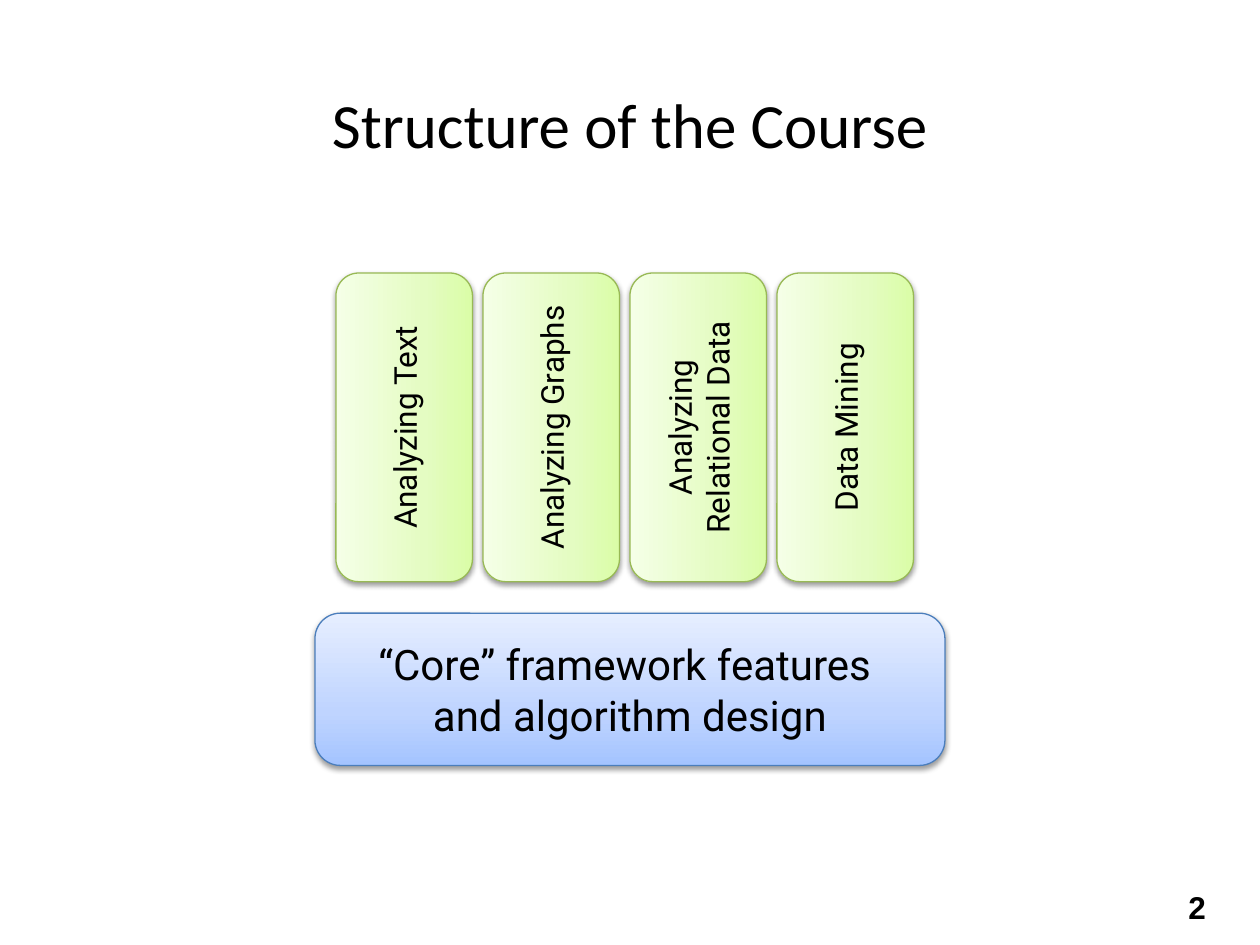
"""Build the course structure slide: four pillars standing on a core block."""
from copy import deepcopy
from dataclasses import dataclass

from lxml import etree
from pptx import Presentation, util as u
from pptx.dml.color import RGBColor
from pptx.enum import shapes, text
from pptx.oxml.ns import qn

COLS, ROWS = 60, 45


@dataclass(frozen=True)
class Style:
    stops: tuple[str, str, str]
    line: str


@dataclass(frozen=True)
class Theme:
    ink: str = "000000"
    title_font: str = "Calibri"
    body_font: str = "Roboto"
    number_font: str = "Arial"
    title: int = 36
    core: int = 24
    label: int = 18
    positions: tuple[float, ...] = (0, 0.35, 1)
    blue: Style = Style(("A4C4FF", "BFD4FF", "E6EEFF"), "4B7EBC")
    green: Style = Style(("DAFDA7", "E4FCC2", "F5FFE7"), "98B955")


@dataclass(frozen=True)
class Area:
    col: float
    row: float
    cols: float
    rows: float


THEME = Theme()
TITLE = Area(0, 3.6, COLS, 4.5)
CORE = Area(15, 29.2, 30, 7.25)
NUMBER = Area(56, 42, 3.5, 2.4)
PILLAR_COL, PILLAR_STEP = 11.9, 7
PILLARS = ("Analyzing Text", "Analyzing Graphs", "Analyzing Relational Data", "Data Mining")


def box(prs, area: Area) -> tuple[int, ...]:
    cw, rh = prs.slide_width / COLS, prs.slide_height / ROWS
    return tuple(round(v) for v in (area.col * cw, area.row * rh, area.cols * cw, area.rows * rh))


def write(sp, words: str, font: str, size: int, align=text.PP_ALIGN.CENTER, bold: bool = False) -> None:
    tf = sp.text_frame
    tf.word_wrap = True
    tf.vertical_anchor = text.MSO_ANCHOR.MIDDLE
    p = tf.paragraphs[0]
    p.text, p.alignment = words, align
    for r in p.runs:
        for name, value in {"name": font, "size": u.Pt(size), "bold": bold}.items():
            setattr(r.font, name, value)
        r.font.color.rgb = RGBColor.from_string(THEME.ink)


def add_shadow(sp) -> None:
    sp.shadow.inherit = False
    effects = sp._element.spPr.find(qn("a:effectLst"))
    shadow = etree.SubElement(effects, qn("a:outerShdw"), blurRad="40000", dist="20000",
                              dir="5400000", rotWithShape="0")
    color = etree.SubElement(shadow, qn("a:srgbClr"), val=THEME.ink)
    etree.SubElement(color, qn("a:alpha"), val="38000")


def add_block(prs, s, area: Area, words: str, style: Style, size: int, rotation: float = 0) -> None:
    sp = s.shapes.add_shape(shapes.MSO_SHAPE.ROUNDED_RECTANGLE, *box(prs, area))
    sp.rotation = rotation
    sp.fill.gradient()
    sp.fill.gradient_angle = 90
    stop_list = next(sp._element.spPr.iter(qn("a:gsLst")))
    stop_list.append(deepcopy(stop_list[-1]))
    for stop, color, position in zip(sp.fill.gradient_stops, style.stops, THEME.positions):
        stop.color.rgb = RGBColor.from_string(color)
        stop.position = position
    sp.line.color.rgb = RGBColor.from_string(style.line)
    sp.line.width = u.Pt(0.75)
    add_shadow(sp)
    write(sp, words, THEME.body_font, size)


def main() -> None:
    prs = Presentation()
    prs.slide_width, prs.slide_height = u.Inches(10), u.Inches(7.5)
    s = prs.slides.add_slide(prs.slide_layouts[6])
    write(s.shapes.add_textbox(*box(prs, TITLE)), "Structure of the Course",
          THEME.title_font, THEME.title)
    add_block(prs, s, CORE, "“Core” framework features \vand algorithm design", THEME.blue, THEME.core)
    for i, label in enumerate(PILLARS):
        area = Area(PILLAR_COL + i * PILLAR_STEP, 17.1, 14.7, 6.5)
        add_block(prs, s, area, label, THEME.green, THEME.label, rotation=270)
    write(s.shapes.add_textbox(*box(prs, NUMBER)), "2", THEME.number_font, THEME.label,
          text.PP_ALIGN.LEFT, bold=True)
    prs.save("out.pptx")


if __name__ == "__main__":
    main()
